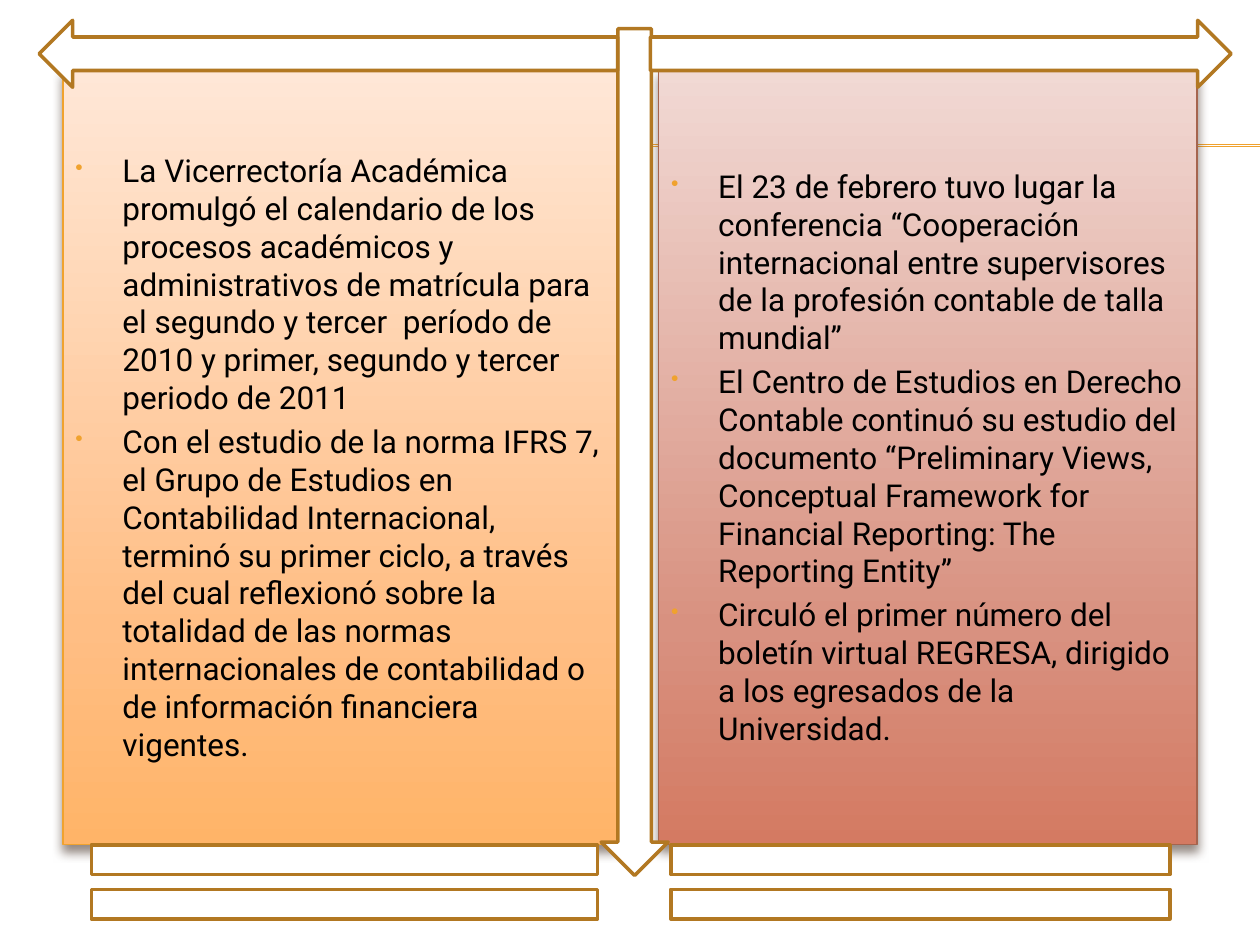
from copy import deepcopy

from lxml.etree import SubElement
from pptx import Presentation
from pptx.dml.color import RGBColor
from pptx.enum.shapes import MSO_CONNECTOR, MSO_SHAPE as SHAPE
from pptx.enum.text import MSO_ANCHOR, PP_ALIGN
from pptx.oxml.ns import qn
from pptx.util import Cm, Pt

COLORS = {
    "white": "FFFFFF", "text": "000000", "accent": "F0A22E",
    "outline": "B27822", "brick": "A5644E", "shadow": "4E3B30",
}
PANELS = [
    (1.27, 11.23, COLORS["accent"], ["FFE7D7", "FFBE84", "FFB468"], [
        "La Vicerrectoría Académica promulgó el calendario de los procesos académicos y "
        "administrativos de matrícula para el segundo y tercer  período de 2010 y primer, "
        "segundo y tercer periodo de 2011",
        "Con el estudio de la norma IFRS 7, el Grupo de Estudios en Contabilidad "
        "Internacional, terminó su primer ciclo, a través del cual reflexionó sobre la "
        "totalidad de las normas internacionales de contabilidad o de información "
        "financiera vigentes.",
    ]),
    (13.28, 10.85, COLORS["brick"], ["F1D9D4", "D89180", "D47A62"], [
        "El 23 de febrero tuvo lugar la conferencia “Cooperación internacional entre "
        "supervisores de la profesión contable de talla mundial”",
        "El Centro de Estudios en Derecho Contable continuó su estudio del documento "
        "“Preliminary Views, Conceptual Framework for Financial Reporting: The "
        "Reporting Entity”",
        "Circuló el primer número del boletín virtual REGRESA, dirigido a los egresados "
        "de la Universidad.",
    ]),
]
FRAME = [
    (SHAPE.DOWN_ARROW, 12.12, 0.58, 1.35, 17.07),
    (SHAPE.RIGHT_ARROW, 13.11, 0.41, 11.71, 1.35),
    (SHAPE.LEFT_ARROW, 0.79, 0.41, 11.66, 1.35),
    (SHAPE.MATH_EQUAL, 0, 16.51, 13.89, 2.54),
    (SHAPE.MATH_EQUAL, 11.71, 16.51, 13.69, 2.54),
]


def add_box(s, kind, x, y, w, h, line, width):
    sp = s.shapes.add_shape(kind, Cm(x), Cm(y), Cm(w), Cm(h))
    sp.shadow.inherit = False
    sp.line.color.rgb = RGBColor.from_string(line)
    sp.line.width = Pt(width)
    return sp


prs = Presentation()
prs.slide_width, prs.slide_height = Cm(25.4), Cm(19.05)
s = prs.slides.add_slide(prs.slide_layouts[6])

for y in (2.92, 2.95):
    rule = s.shapes.add_connector(MSO_CONNECTOR.STRAIGHT, Cm(1.42), Cm(y), Cm(25.4), Cm(y))
    rule.line.color.rgb = RGBColor.from_string(COLORS["accent"])
    rule.line.width = Pt(0.75)
    SubElement(rule._element.spPr, qn("a:effectLst"))

for x, w, line, gradient, items in PANELS:
    sp = add_box(s, SHAPE.RECTANGLE, x, 1.4, w, 15.62, line, 0.79)
    sp.fill.gradient()
    sp.fill.gradient_angle = 270
    stops = sp._element.spPr.find(".//" + qn("a:gsLst"))
    stops.append(deepcopy(stops[-1]))
    for stop, position, color in zip(sp.fill.gradient_stops, (0, 0.72, 1), gradient):
        stop.position = position
        stop.color.rgb = RGBColor.from_string(color)

    effects = sp._element.spPr.find(qn("a:effectLst"))
    shadow = SubElement(effects, qn("a:outerShdw"), blurRad=str(Pt(6)), dist=str(Pt(4)),
                        dir="5400000", rotWithShape="0")
    tint = SubElement(shadow, qn("a:srgbClr"), val=COLORS["shadow"])
    SubElement(tint, qn("a:alpha"), val="60000")

    tf = sp.text_frame
    tf.word_wrap = True
    tf.vertical_anchor = MSO_ANCHOR.MIDDLE
    for i, item in enumerate(items):
        p = tf.add_paragraph() if i else tf.paragraphs[0]
        p.text = item
        p.alignment = PP_ALIGN.LEFT
        p.space_before = Pt(3.6 if i else 0)
        pPr = p._p.get_or_add_pPr()
        pPr.set("marL", str(Cm(0.95)))
        pPr.set("indent", str(Cm(-0.95)))
        bullet = SubElement(pPr, qn("a:buClr"))
        SubElement(bullet, qn("a:srgbClr"), val=COLORS["accent"])
        SubElement(pPr, qn("a:buSzPct"), val="70000")
        SubElement(pPr, qn("a:buChar"), char="•")
        r = p.runs[0]
        r.font.name = "Roboto"
        r.font.size = Pt(18)
        r.font.color.rgb = RGBColor.from_string(COLORS["text"])

for kind, x, y, w, h in FRAME:
    sp = add_box(s, kind, x, y, w, h, COLORS["outline"], 2)
    sp.fill.solid()
    sp.fill.fore_color.rgb = RGBColor.from_string(COLORS["white"])

prs.save("out.pptx")
